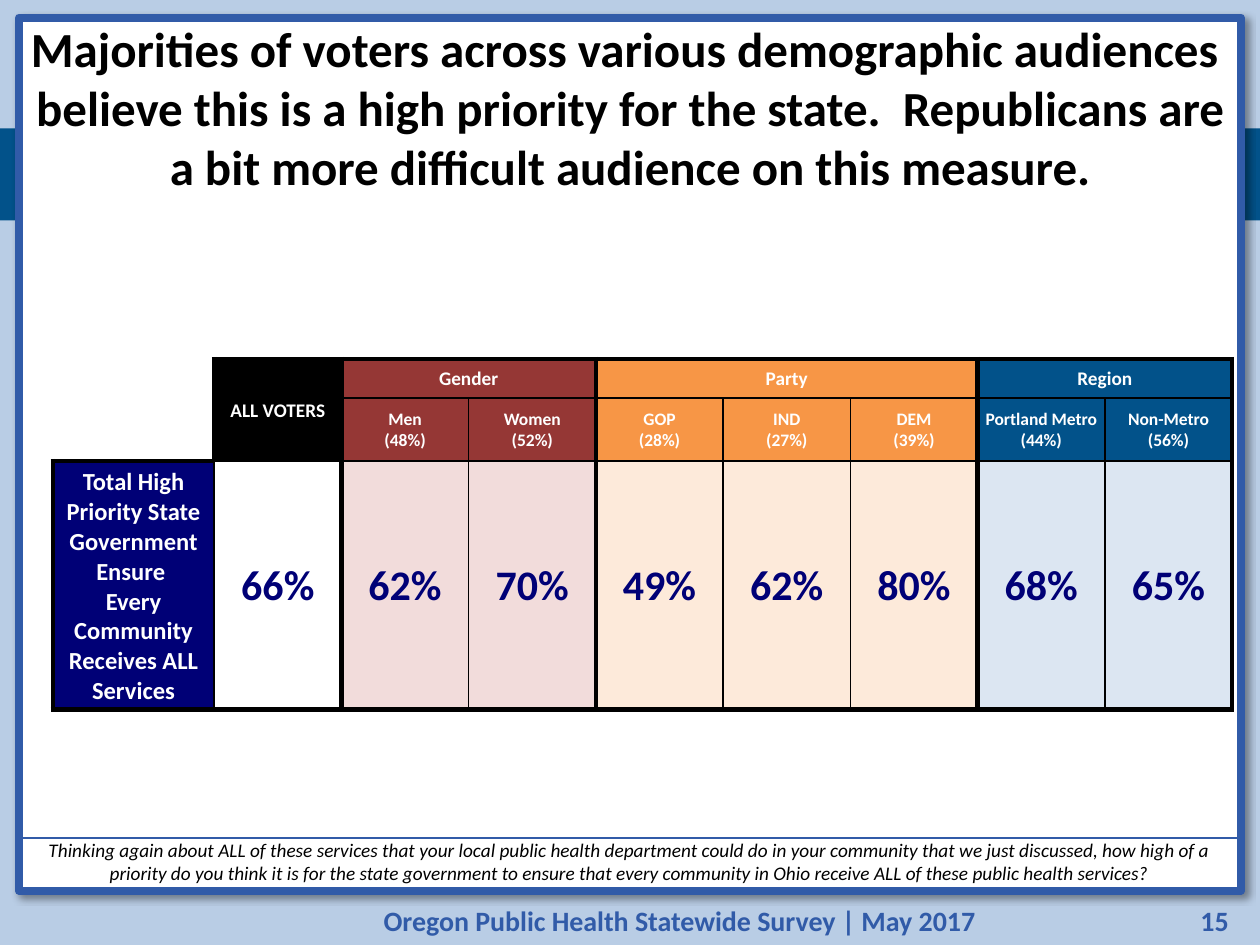
from dataclasses import dataclass

from lxml.etree import SubElement
from pptx import Presentation
from pptx.dml.color import RGBColor
from pptx.enum.shapes import MSO_SHAPE as Shape
from pptx.enum.text import MSO_ANCHOR as Anchor, PP_ALIGN as Align
from pptx.oxml.ns import qn
from pptx.util import Inches, Pt

COLORS = {
    "background": "B9CDE5", "blue": "315BA8", "band": "02528A",
    "white": "FFFFFF", "black": "000000", "navy": "000076",
    "red": "953735", "orange": "F79646",
    "pale red": "F2DCDB", "pale orange": "FDEADA", "pale blue": "DCE6F2",
}
FONT = "Calibri"
THIN, HEAVY = 1, 3
LABEL_WIDTH, VALUE_WIDTH = 1.28, 1.01
ROW_HEIGHTS = (0.31, 0.5, 1.97)


@dataclass
class Group:
    name: str
    fill: str
    tint: str
    columns: list[tuple[str, str]]


GROUPS = [
    Group("Gender", "red", "pale red", [("Men\n(48%)", "62%"), ("Women\n(52%)", "70%")]),
    Group("Party", "orange", "pale orange",
          [("GOP\n(28%)", "49%"), ("IND\v(27%)", "62%"), ("DEM\v(39%)", "80%")]),
    Group("Region", "band", "pale blue",
          [("Portland Metro\n(44%)", "68%"), ("Non-Metro\n(56%)", "65%")]),
]


def rgb(name: str) -> RGBColor:
    return RGBColor.from_string(COLORS[name])


def write(frame, text: str, size: float, color: str, align=Align.CENTER,
          bold: bool = True, italic: bool = False) -> None:
    frame.text = text
    for para in frame.paragraphs:
        para.alignment = align
        font = para.font
        font.name, font.size, font.bold, font.italic = FONT, Pt(size), bold, italic
        font.color.rgb = rgb(color)


def set_margins(holder, left: float, top: float, right: float, bottom: float) -> None:
    holder.margin_left, holder.margin_top = Inches(left), Inches(top)
    holder.margin_right, holder.margin_bottom = Inches(right), Inches(bottom)


def place(shape, left: float, top: float, width: float, height: float) -> None:
    shape.left, shape.top = Inches(left), Inches(top)
    shape.width, shape.height = Inches(width), Inches(height)


def add_rectangle(page, left: float, top: float, width: float, height: float,
                  fill: str | None, line: str | None = None, weight: float = 0):
    shape = page.shapes.add_shape(Shape.RECTANGLE, Inches(left), Inches(top),
                                  Inches(width), Inches(height))
    shape.shadow.inherit = False
    if fill:
        shape.fill.solid()
        shape.fill.fore_color.rgb = rgb(fill)
    else:
        shape.fill.background()
    if line:
        shape.line.color.rgb = rgb(line)
        shape.line.width = Pt(weight)
    else:
        shape.line.fill.background()
    return shape


def add_shadow(shape) -> None:
    effects = shape._element.spPr.find(qn("a:effectLst"))
    shadow = SubElement(effects, qn("a:outerShdw"), blurRad=str(Pt(4)), dist=str(Pt(3)),
                        dir=str(45 * 60000), algn="tl", rotWithShape="0")
    color = SubElement(shadow, qn("a:srgbClr"), val=COLORS["black"])
    SubElement(color, qn("a:alpha"), val="40000")


def add_footer(page, left: float, width: float, text: str, align) -> None:
    box = page.shapes.add_textbox(Inches(left), Inches(7.12), Inches(width), Inches(0.37))
    box.text_frame.word_wrap = True
    box.text_frame.vertical_anchor = Anchor.MIDDLE
    write(box.text_frame, text, 16, "blue", align)


def set_borders(cell, weights: dict[str, int]) -> None:
    properties = cell._tc.get_or_add_tcPr()
    for position, side in enumerate("LRTB"):
        weight = weights.get(side, 0)
        line = properties.makeelement(qn(f"a:ln{side}"), {"w": str(Pt(weight))})
        properties.insert(position, line)
        if weight:
            fill = SubElement(line, qn("a:solidFill"))
            SubElement(fill, qn("a:srgbClr"), val=COLORS["black"])
        else:
            SubElement(line, qn("a:noFill"))


def fill_cell(table, row: int, column: int, text: str, fill: str | None, size: float,
              color: str = "white", rows: int = 1, columns: int = 1,
              margins=(0.01, 0.01, 0.01, 0), **borders: int) -> None:
    cell = table.cell(row, column)
    if rows * columns > 1:
        cell.merge(table.cell(row + rows - 1, column + columns - 1))
    write(cell.text_frame, text, size, color)
    cell.vertical_anchor = Anchor.MIDDLE
    set_margins(cell, *margins)
    if fill:
        cell.fill.solid()
        cell.fill.fore_color.rgb = rgb(fill)
    else:
        cell.fill.background()
    set_borders(cell, borders)


def add_survey_table(page) -> None:
    count = 2 + sum(len(group.columns) for group in GROUPS)
    frame = page.shapes.add_table(
        len(ROW_HEIGHTS), count, Inches(0.42), Inches(2.85),
        Inches(LABEL_WIDTH + VALUE_WIDTH * (count - 1)), Inches(sum(ROW_HEIGHTS)))
    table = frame.table
    table.first_row = table.horz_banding = False
    for index, column in enumerate(table.columns):
        column.width = Inches(VALUE_WIDTH if index else LABEL_WIDTH)
    for row, height in zip(table.rows, ROW_HEIGHTS):
        row.height = Inches(height)

    # Row label and the total for all voters
    fill_cell(table, 0, 0, "", None, 11, rows=2, R=HEAVY, B=HEAVY)
    fill_cell(table, 0, 1, "ALL VOTERS", "black", 11, rows=2,
              L=HEAVY, T=HEAVY, R=HEAVY, B=THIN)
    fill_cell(table, 2, 0, "Total High Priority State Government Ensure \v"
              "Every Community Receives ALL Services", "navy", 14,
              margins=(0.05,) * 4, L=HEAVY, T=HEAVY, R=THIN, B=HEAVY)
    fill_cell(table, 2, 1, "66%", None, 24, "navy", L=THIN, T=THIN, R=HEAVY, B=HEAVY)

    # Demographic groups, each framed by heavy side borders
    start = 2
    for group in GROUPS:
        span = len(group.columns)
        fill_cell(table, 0, start, group.name, group.fill, 11, columns=span,
                  L=HEAVY, T=HEAVY, R=HEAVY, B=THIN)
        for offset, (label, value) in enumerate(group.columns):
            sides = {"L": THIN if offset else HEAVY, "T": THIN,
                     "R": HEAVY if offset == span - 1 else THIN}
            fill_cell(table, 1, start + offset, label, group.fill, 10, B=THIN, **sides)
            fill_cell(table, 2, start + offset, value, group.tint, 24, "navy",
                      B=HEAVY, **sides)
        start += span


def main() -> None:
    deck = Presentation()
    deck.slide_width, deck.slide_height = Inches(10), Inches(7.5)
    page = deck.slides.add_slide(deck.slide_layouts[5])
    page.background.fill.solid()
    page.background.fill.fore_color.rgb = rgb("background")

    # Band, footer and white panel
    add_rectangle(page, 0, 1.02, 10, 0.73, "band")
    add_footer(page, 1.62, 7.55, "Oregon Public Health Statewide Survey | May 2017", Align.CENTER)
    add_footer(page, 9.17, 0.68, "15", Align.RIGHT)
    add_shadow(add_rectangle(page, 0.15, 0.14, 9.7, 6.93, "white", "blue", 4.5))

    # Survey question
    question = add_rectangle(page, 0.15, 6.65, 9.7, 0.42, None, "blue", 0.75)
    question.text_frame.word_wrap = True
    question.text_frame.vertical_anchor = Anchor.BOTTOM
    set_margins(question.text_frame, 0.07, 0, 0.07, 0.05)
    write(question.text_frame,
          "Thinking again about ALL of these services that your local public health department "
          "could do in your community that we just discussed, how high of a priority do you "
          "think it is for the state government to ensure that every community in Ohio receive "
          "ALL of these public health services?", 11, "black", bold=False, italic=True)

    add_survey_table(page)

    # Title, brought in front of the panel
    title = page.shapes.title
    place(title, 0.15, 0.28, 9.7, 1.14)
    title.text_frame.word_wrap = True
    title.text_frame.vertical_anchor = Anchor.MIDDLE
    set_margins(title.text_frame, 0.04, 0.05, 0.04, 0.05)
    write(title.text_frame,
          "Majorities of voters across various demographic audiences  believe this is a high "
          "priority for the state.  Republicans are a bit more difficult audience on this "
          "measure.", 28, "black")
    title._element.getparent().append(title._element)

    deck.save("out.pptx")


if __name__ == "__main__":
    main()
